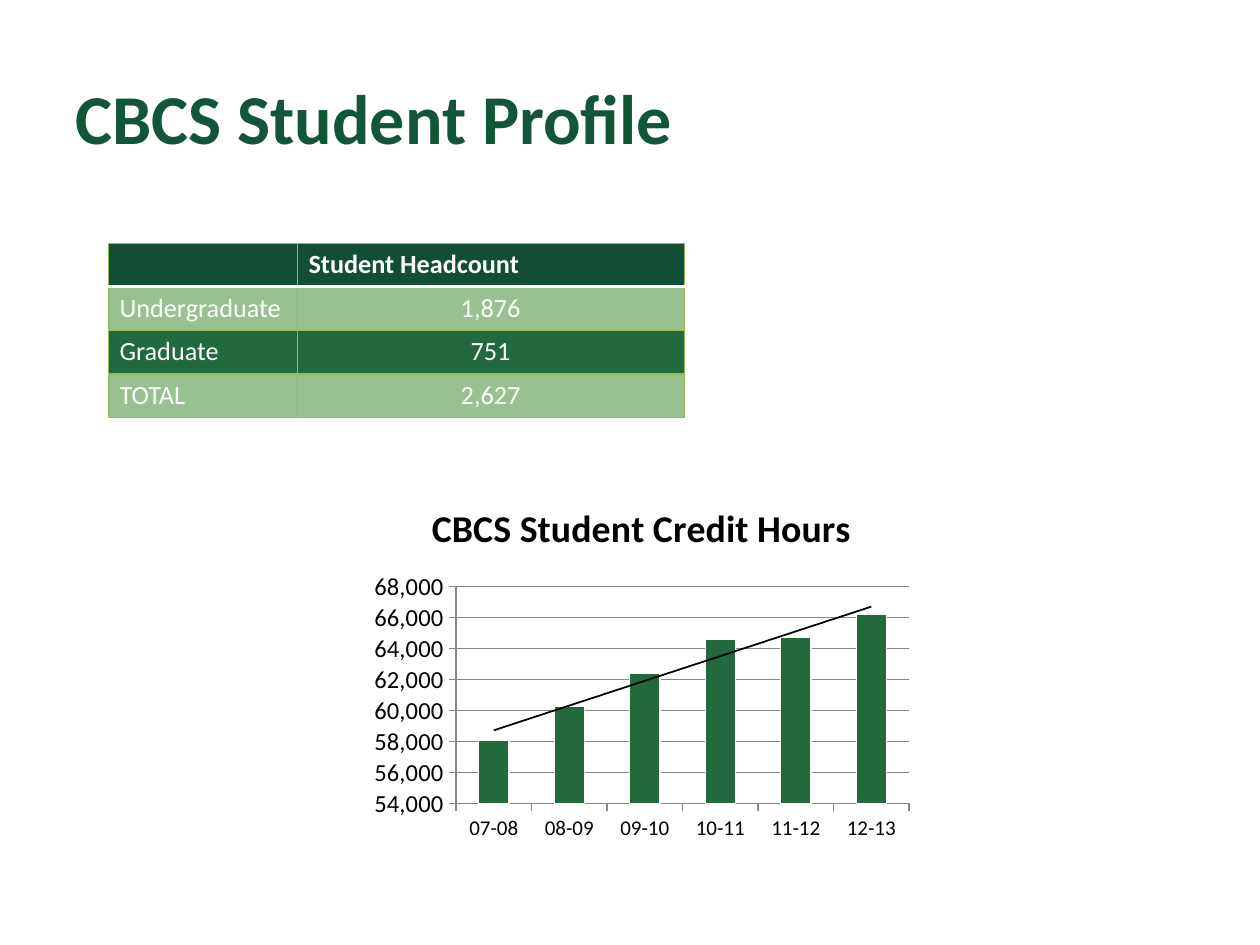
"""Build the student profile slide with a headcount table and a credit hours chart."""
from dataclasses import dataclass

import pptx
import pptx.chart.data
import pptx.dml.color
import pptx.enum.chart
import pptx.enum.text
import pptx.oxml
import pptx.oxml.ns
import pptx.util

Cm = pptx.util.Cm
Pt = pptx.util.Pt
Align = pptx.enum.text.PP_ALIGN
NS = pptx.oxml.ns.nsdecls("a", "c")


@dataclass(frozen=True)
class Theme:
    """Hold the colours and type sizes of the slide."""
    face: str = "Calibri"
    title: str = "115639"
    head: str = "124E33"
    main: str = "22693E"
    pale: str = "97C28F"
    edge: str = "98B955"
    grid: str = "868686"
    white: str = "FFFFFF"
    black: str = "000000"
    big: float = 40
    label: float = 21.6
    cell: float = 15
    axis: float = 14
    small: float = 12


THEME = Theme()
HEADS = [
    ("", "Student Headcount"),
    ("Undergraduate", "1,876"),
    ("Graduate", "751"),
    ("TOTAL", "2,627"),
]
HOURS = {
    "07-08": 58100,
    "08-09": 60300,
    "09-10": 62400,
    "10-11": 64600,
    "11-12": 64700,
    "12-13": 66200,
}
NAME = "CBCS Student Credit Hours"


def rgb(code):
    """Turn a hex code into a colour."""
    return pptx.dml.color.RGBColor.from_string(code)


def apply(item, **values):
    """Set each given attribute on an item."""
    for key, value in values.items():
        setattr(item, key, value)


def style(font, size, color, bold=False):
    """Format a font in the theme's typeface."""
    apply(font, name=THEME.face, size=Pt(size), bold=bold)
    font.color.rgb = rgb(color)


def stroke(line, color, width):
    """Give a line its colour and width."""
    line.color.rgb = rgb(color)
    line.width = Pt(width)


def edge(cell, side, color, width):
    """Draw one border of a table cell."""
    cell._tc.get_or_add_tcPr().append(pptx.oxml.parse_xml(
        f'<a:ln{side} {NS} w="{Pt(width)}"><a:solidFill>'
        f'<a:srgbClr val="{color}"/></a:solidFill></a:ln{side}>'))


def add_title(slide):
    """Fill and place the title."""
    shape = slide.shapes.title
    apply(shape, left=Cm(1.27), top=Cm(0.76), width=Cm(22.86), height=Cm(3.18))
    frame = shape.text_frame
    apply(frame, text="CBCS Student Profile", word_wrap=True,
          vertical_anchor=pptx.enum.text.MSO_ANCHOR.MIDDLE)
    para = frame.paragraphs[0]
    para.alignment = Align.LEFT
    style(para.runs[0].font, THEME.big, THEME.title, True)


def fill_cell(cell, row, col, text):
    """Write, border and shade one table cell."""
    rule = (THEME.white, 2)
    thin = (THEME.edge, 0.75)
    sides = {"L": thin, "R": thin,
             "T": rule if row == 1 else thin,
             "B": rule if row == 0 else thin}
    for side, look in sides.items():
        edge(cell, side, *look)
    cell.fill.solid()
    shade = THEME.head if row == 0 else (THEME.main, THEME.pale)[row % 2]
    cell.fill.fore_color.rgb = rgb(shade)
    apply(cell, text=text, margin_left=Cm(0.23), margin_right=Cm(0.23),
          margin_top=Cm(0.11), margin_bottom=Cm(0.11))
    para = cell.text_frame.paragraphs[0]
    para.alignment = Align.CENTER if row and col else Align.LEFT
    style(para.font, THEME.cell, THEME.white, row == 0)


def add_heads(slide):
    """Add the headcount table."""
    wide, tall = (3.81, 7.8), 0.88
    table = slide.shapes.add_table(
        len(HEADS), len(wide), Cm(2.18), Cm(4.9),
        Cm(sum(wide)), Cm(tall * len(HEADS))).table
    for col, width in zip(table.columns, wide):
        col.width = Cm(width)
    for row, texts in enumerate(HEADS):
        table.rows[row].height = Cm(tall)
        for col, text in enumerate(texts):
            fill_cell(table.cell(row, col), row, col, text)


def add_trend(series):
    """Add a linear trend line to a series."""
    trend = pptx.oxml.parse_xml(
        f'<c:trendline {NS}><c:spPr><a:ln w="{Pt(1)}"><a:solidFill>'
        f'<a:srgbClr val="{THEME.black}"/></a:solidFill></a:ln></c:spPr>'
        '<c:trendlineType val="linear"/><c:dispRSqr val="0"/>'
        '<c:dispEq val="0"/></c:trendline>')
    series._element.find(pptx.oxml.ns.qn("c:cat")).addprevious(trend)


def add_hours(slide):
    """Add the credit hours chart."""
    kinds = pptx.enum.chart
    data = pptx.chart.data.CategoryChartData(number_format="#,##0")
    data.categories = list(HOURS)
    data.add_series(NAME, list(HOURS.values()))
    chart = slide.shapes.add_chart(
        kinds.XL_CHART_TYPE.COLUMN_CLUSTERED,
        Cm(7.32), Cm(9.68), Cm(11.23), Cm(7.42), data).chart
    style(chart.font, THEME.axis, THEME.black)
    apply(chart, has_legend=False, has_title=True)
    frame = chart.chart_title.text_frame
    frame.text = NAME
    style(frame.paragraphs[0].runs[0].font, THEME.label, THEME.black, True)
    chart.chart_title.include_in_layout = False

    plot = chart.plots[0]
    apply(plot, gap_width=150, vary_by_categories=False)
    bars = plot.series[0]
    bars.format.fill.solid()
    bars.format.fill.fore_color.rgb = rgb(THEME.main)
    stroke(bars.format.line, THEME.white, 0.75)
    add_trend(bars)

    sizes = ((chart.category_axis, THEME.small), (chart.value_axis, THEME.axis))
    for axis, size in sizes:
        axis.major_tick_mark = kinds.XL_TICK_MARK.OUTSIDE
        style(axis.tick_labels.font, size, THEME.black)
        stroke(axis.format.line, THEME.grid, 0.75)
    axis = chart.value_axis
    apply(axis, minimum_scale=54000, maximum_scale=68000, major_unit=2000,
          has_major_gridlines=True)
    stroke(axis.major_gridlines.format.line, THEME.grid, 0.75)
    apply(axis.tick_labels, number_format="#,##0", number_format_is_linked=False)


def main():
    """Build and save the slide."""
    deck = pptx.Presentation()
    apply(deck, slide_width=Cm(25.4), slide_height=Cm(19.05))
    slide = deck.slides.add_slide(deck.slide_layouts[5])
    add_title(slide)
    add_heads(slide)
    add_hours(slide)
    deck.save("out.pptx")


if __name__ == "__main__":
    main()
